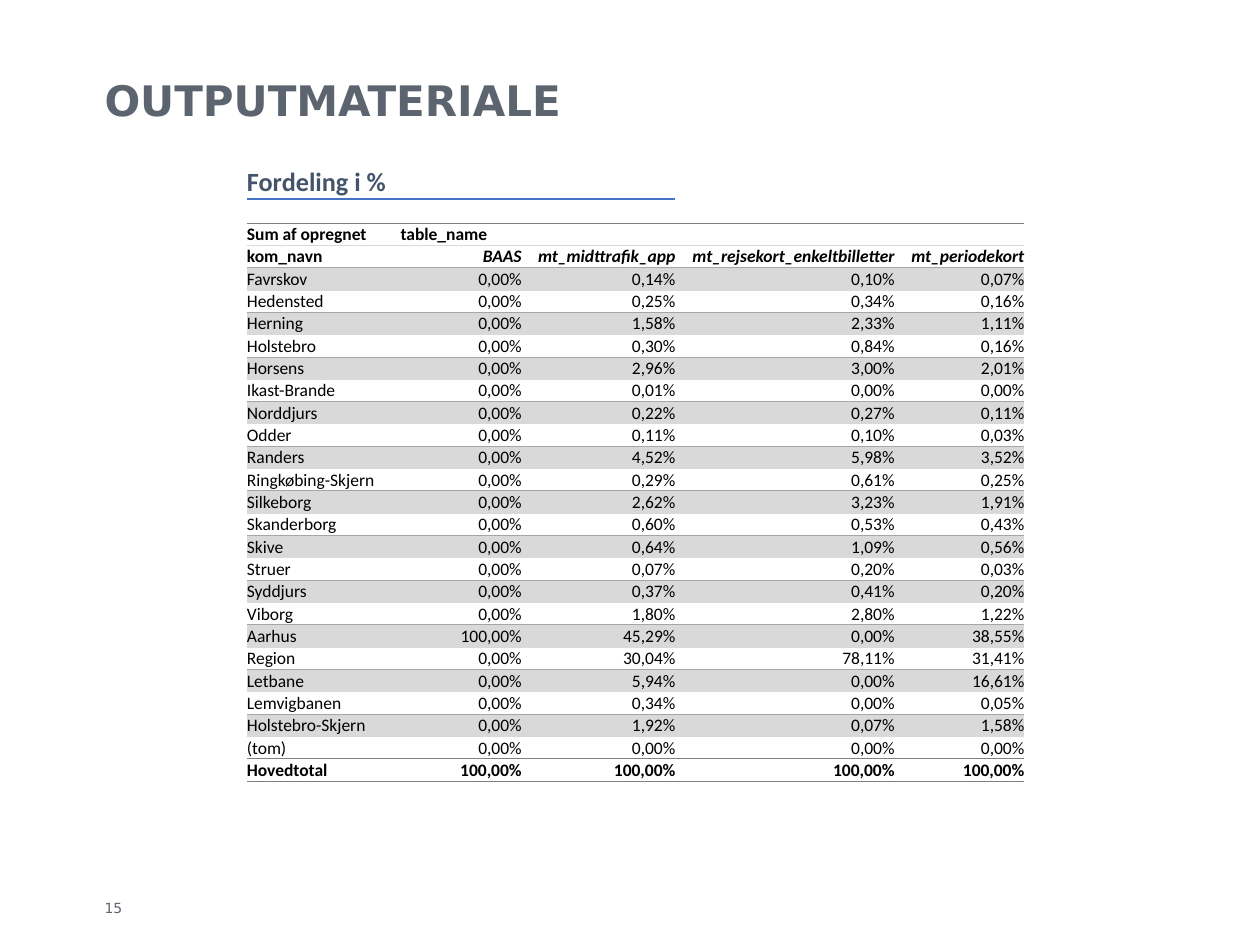
from lxml import etree
from pptx import Presentation
from pptx.dml.color import RGBColor
from pptx.enum import text
from pptx.oxml import ns
from pptx.util import Inches, Pt

SLATE, GREY, LIGHT, MID = "5C656F", "808080", "D9D9D9", "A6A6A6"
COLS = [1.22, 0.96, 1.22, 1.74, 1.03]
HEADING = "Fordeling i %"
HEADERS = [
    ["Sum af opregnet", "table_name", "", "", ""],
    ["kom_navn", "BAAS", "mt_midttrafik_app", "mt_rejsekort_enkeltbilletter", "mt_periodekort"],
]
SHARES = """Favrskov 0,00% 0,14% 0,10% 0,07%
Hedensted 0,00% 0,25% 0,34% 0,16%
Herning 0,00% 1,58% 2,33% 1,11%
Holstebro 0,00% 0,30% 0,84% 0,16%
Horsens 0,00% 2,96% 3,00% 2,01%
Ikast-Brande 0,00% 0,01% 0,00% 0,00%
Norddjurs 0,00% 0,22% 0,27% 0,11%
Odder 0,00% 0,11% 0,10% 0,03%
Randers 0,00% 4,52% 5,98% 3,52%
Ringkøbing-Skjern 0,00% 0,29% 0,61% 0,25%
Silkeborg 0,00% 2,62% 3,23% 1,91%
Skanderborg 0,00% 0,60% 0,53% 0,43%
Skive 0,00% 0,64% 1,09% 0,56%
Struer 0,00% 0,07% 0,20% 0,03%
Syddjurs 0,00% 0,37% 0,41% 0,20%
Viborg 0,00% 1,80% 2,80% 1,22%
Aarhus 100,00% 45,29% 0,00% 38,55%
Region 0,00% 30,04% 78,11% 31,41%
Letbane 0,00% 5,94% 0,00% 16,61%
Lemvigbanen 0,00% 0,34% 0,00% 0,05%
Holstebro-Skjern 0,00% 1,92% 0,07% 1,58%
(tom) 0,00% 0,00% 0,00% 0,00%
Hovedtotal 100,00% 100,00% 100,00% 100,00%"""


def rgb(color):
    """Turn a hex string into a colour."""
    return RGBColor.from_string(color)


def set_all(obj, values):
    """Set each named attribute on an object."""
    for name, value in values.items():
        setattr(obj, name, value)


def write(p, words, size, color, font, bold=False, italic=False):
    """Write one formatted run into a paragraph."""
    r = p.add_run()
    r.text = words
    set_all(r.font, {"size": Pt(size), "name": font, "bold": bold, "italic": italic})
    r.font.color.rgb = rgb(color)


def fill_box(sp, at, words, size, bold, anchor):
    """Place a text shape and fill it with one line."""
    set_all(sp, dict(zip(("left", "top", "width", "height"), map(Inches, at))))
    tf = sp.text_frame
    set_all(tf, {"margin_left": 0, "margin_top": 0, "margin_right": 0, "margin_bottom": 0,
                 "word_wrap": True, "vertical_anchor": anchor,
                 "auto_size": text.MSO_AUTO_SIZE.NONE})
    p = tf.paragraphs[0]
    p.alignment = text.PP_ALIGN.LEFT
    write(p, words, size, SLATE, "DejaVu Sans", bold)


def set_borders(cell, top, bottom):
    """Draw the top and bottom borders of a cell and clear its sides."""
    tc_pr = cell._tc.get_or_add_tcPr()
    for side, line in zip("LRTB", (None, None, top, bottom)):
        ln = etree.SubElement(tc_pr, ns.qn(f"a:ln{side}"))
        if line is None:
            etree.SubElement(ln, ns.qn("a:noFill"))
            continue
        color, width = line
        ln.set("w", str(Pt(width)))
        fill = etree.SubElement(ln, ns.qn("a:solidFill"))
        etree.SubElement(fill, ns.qn("a:srgbClr")).set("val", color)


def fill_cell(cell, words, right, top, bottom, fill=None, size=10, color="000000", **style):
    """Format one table cell and write its words."""
    set_all(cell, {"margin_left": 0, "margin_top": 0, "margin_right": 0, "margin_bottom": 0,
                   "vertical_anchor": text.MSO_ANCHOR.BOTTOM})
    set_borders(cell, top, bottom)
    if fill:
        cell.fill.solid()
        cell.fill.fore_color.rgb = rgb(fill)
    else:
        cell.fill.background()
    p = cell.text_frame.paragraphs[0]
    p.alignment = text.PP_ALIGN.RIGHT if right else text.PP_ALIGN.LEFT
    if words:
        write(p, words, size, color, "Calibri", **style)
    else:
        p._p.get_or_add_endParaRPr().set("sz", str(size * 100))


def add_heading_rows(tbl):
    """Fill the underlined heading row and the spacer below it."""
    for c in range(len(COLS)):
        rule = ("4472C4", 1.5) if c < 3 else None
        fill_cell(tbl.cell(0, c), "" if c else HEADING, False, None, rule,
                  size=15, color="44546A", bold=True)
        fill_cell(tbl.cell(1, c), "", False, rule, (GREY, 0.5))


def add_header_rows(tbl):
    """Fill the two bold header rows."""
    edges = [GREY, LIGHT, MID]
    for i, row in enumerate(HEADERS):
        for c, words in enumerate(row):
            is_name = i == 1 and c > 0
            fill_cell(tbl.cell(2 + i, c), words, is_name, (edges[i], 0.5),
                      (edges[i + 1], 0.5), bold=True, italic=is_name)


def add_share_rows(tbl, rows):
    """Fill the banded rows of shares and the total row."""
    last = len(rows) - 1
    for i, row in enumerate(rows):
        top, bottom, fill = (LIGHT, MID, None) if i % 2 else (MID, LIGHT, LIGHT)
        if i == last - 1:
            bottom = GREY
        if i == last:
            top, bottom, fill = GREY, GREY, "FFFFFF"
        for c, words in enumerate(row):
            fill_cell(tbl.cell(4 + i, c), words, c > 0, (top, 0.5), (bottom, 0.5),
                      fill, bold=i == last)


def add_share_table(s):
    """Add the table of shares by municipality."""
    rows = [line.split() for line in SHARES.splitlines()]
    height, heading, spacer = 4.9, 0.28, 0.19
    count = len(HEADERS) + len(rows)
    tbl = s.shapes.add_table(count + 2, len(COLS), Inches(1.96), Inches(1.3),
                             Inches(sum(COLS)), Inches(height)).table
    set_all(tbl, {"first_row": False, "horz_banding": False})
    for col, width in zip(tbl.columns, COLS):
        col.width = Inches(width)
    heights = [heading, spacer] + [(height - heading - spacer) / count] * count
    for row, h in zip(tbl.rows, heights):
        row.height = Inches(h)
    add_heading_rows(tbl)
    add_header_rows(tbl)
    add_share_rows(tbl, rows)


def main():
    """Build the slide and save it."""
    prs = Presentation()
    set_all(prs, {"slide_width": Inches(10), "slide_height": Inches(7.5)})
    s = prs.slides.add_slide(prs.slide_layouts[5])
    fill_box(s.shapes.title, (0.83, 0.59, 8.43, 0.83), "OUTPUTMATERIALE", 24, True,
             text.MSO_ANCHOR.TOP)
    fill_box(s.shapes.add_textbox(0, 0, 0, 0), (0.83, 7.01, 0.34, 0.4), "15", 8, False,
             text.MSO_ANCHOR.MIDDLE)
    add_share_table(s)
    prs.save("out.pptx")


if __name__ == "__main__":
    main()
